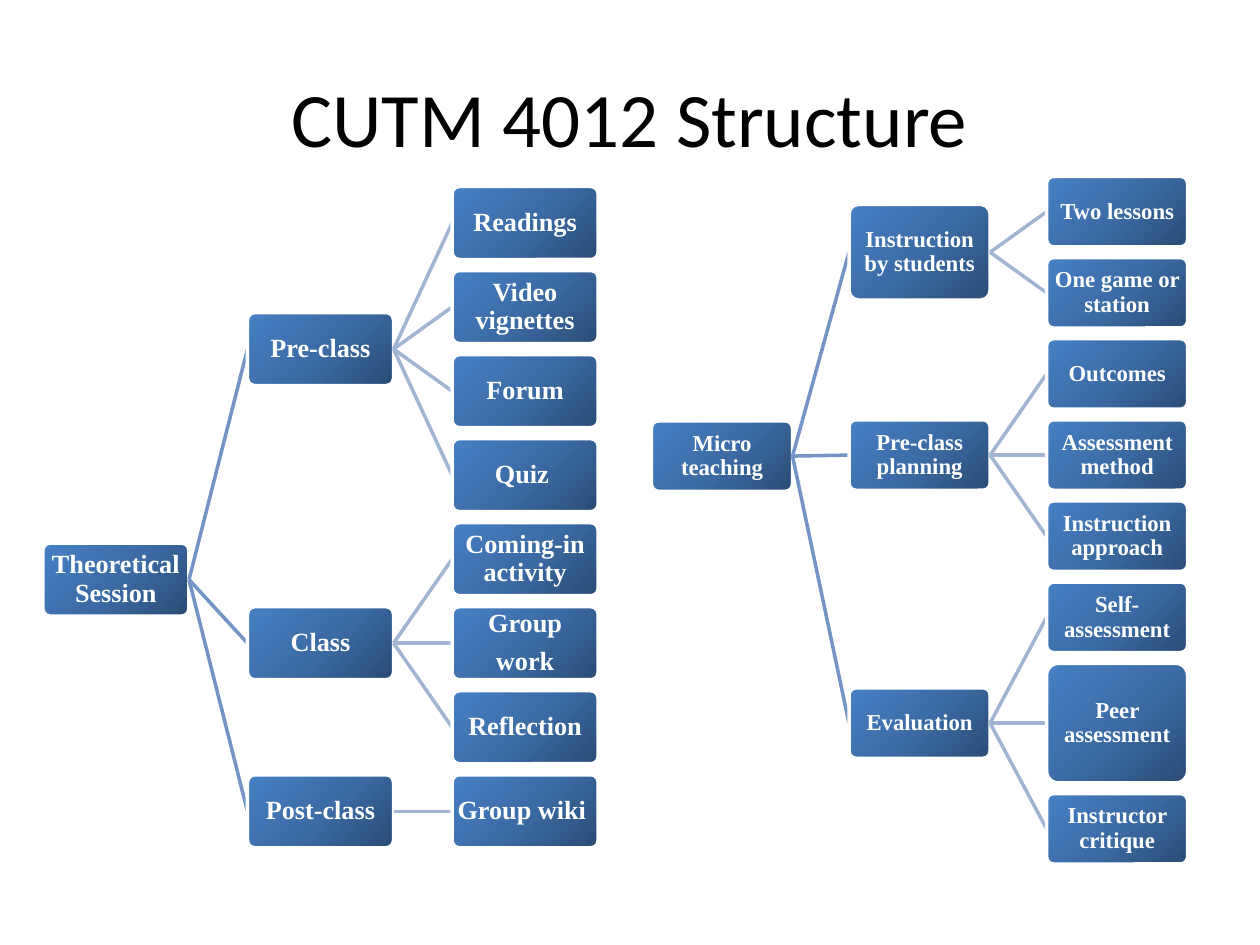
from dataclasses import dataclass

from pptx import Presentation
from pptx.dml.color import RGBColor
from pptx.enum.shapes import MSO_CONNECTOR as Line, MSO_SHAPE as Shape
from pptx.enum.text import MSO_ANCHOR as Anchor, PP_ALIGN as Align
from pptx.oxml import parse_xml
from pptx.oxml.ns import nsdecls, qn
from pptx.util import Inches, Pt


@dataclass(frozen=True)
class Theme:
    title_font: str = "Calibri"
    node_font: str = "Times New Roman"
    title_size: int = 44
    black: str = "000000"
    white: str = "FFFFFF"
    branch_link: str = "7394C5"
    leaf_link: str = "A1B4D4"
    gradient: tuple = ((0, "2A4C75"), (50, "3C6CA6"), (100, "4780C5"))
    line_width: int = 2


theme = Theme()
rgb = RGBColor.from_string

# Each tree: branches hold a label and their leaves
trees = [
    dict(
        root="Theoretical Session", left=0.34, top=1.48, width=1.16, height=0.58,
        size=15, root_middle=4.6, tall={},
        branches=[
            ("Pre-class", ["Readings", "Video vignettes", "Forum", "Quiz "]),
            ("Class", ["Coming-in activity", "Group\nwork", "Reflection"]),
            ("Post-class", ["Group wiki "]),
        ],
    ),
    dict(
        root="Micro teaching", left=5.17, top=1.4, width=1.12, height=0.56,
        size=13, root_middle=3.62,
        tall={"Instruction by students": 0.76, "Peer assessment": 0.95},
        branches=[
            ("Instruction by students", ["Two lessons", "One game or station"]),
            ("Pre-class planning",
             ["Outcomes", "Assessment method", "Instruction approach"]),
            ("Evaluation",
             ["Self-assessment", "Peer assessment", "Instructor critique"]),
        ],
    ),
]

deck = Presentation()
deck.slide_width, deck.slide_height = Inches(10), Inches(7.5)
page = deck.slides.add_slide(deck.slide_layouts[5])


def add_node(tree, label, column, middle):
    """Draw a gradient box centred vertically on middle."""
    height = tree["tall"].get(label, tree["height"])
    left = tree["left"] + column * 1.4 * tree["width"]
    box = page.shapes.add_shape(
        Shape.ROUNDED_RECTANGLE, Inches(left), Inches(middle - height / 2),
        Inches(tree["width"]), Inches(height))
    box.adjustments[0] = 0.1
    box.shadow.inherit = False
    box.line.color.rgb = rgb(theme.white)
    box.line.width = Pt(theme.line_width)

    # Radial gradient, darkest at the bottom right corner
    stops = "".join(
        f'<a:gs pos="{pos * 1000}"><a:srgbClr val="{color}"/></a:gs>'
        for pos, color in theme.gradient)
    gradient = parse_xml(
        f'<a:gradFill {nsdecls("a")} rotWithShape="1"><a:gsLst>{stops}</a:gsLst>'
        '<a:path path="circle"><a:fillToRect l="100000" t="100000"/></a:path>'
        '</a:gradFill>')
    box.fill.background()
    props = box._element.spPr
    props.replace(props.find(qn("a:noFill")), gradient)

    frame = box.text_frame
    frame.word_wrap = True
    frame.vertical_anchor = Anchor.MIDDLE
    frame.margin_left = frame.margin_right = Inches(0.01)
    frame.margin_top = frame.margin_bottom = Inches(0.01)
    frame.text = label
    for para in frame.paragraphs:
        para.alignment = Align.CENTER
        para.line_spacing = 0.9
        para.space_after = Pt(round(0.35 * tree["size"], 1))
        para.font.name = theme.node_font
        para.font.size = Pt(tree["size"])
        para.font.bold = True
        para.font.color.rgb = rgb(theme.white)


def add_link(tree, column, start, end, color):
    """Join a box in column to one in the next column."""
    left = tree["left"] + column * 1.4 * tree["width"] + tree["width"]
    link = page.shapes.add_connector(
        Line.STRAIGHT, Inches(left), Inches(start),
        Inches(left + 0.4 * tree["width"]), Inches(end))
    link.line.color.rgb = rgb(color)
    link.line.width = Pt(theme.line_width)
    link._element.spPr.append(parse_xml(f'<a:effectLst {nsdecls("a")}/>'))


# Title
title = page.shapes.title
title.left, title.top = Inches(0.5), Inches(0.3)
title.width, title.height = Inches(9), Inches(1.25)
title.text_frame.text = "CUTM 4012 Structure"
title.text_frame.vertical_anchor = Anchor.MIDDLE
para = title.text_frame.paragraphs[0]
para.alignment = Align.CENTER
para.font.name = theme.title_font
para.font.size = Pt(theme.title_size)
para.font.color.rgb = rgb(theme.black)

# Trees: leaves stack downwards, each branch is centred on its leaves
for tree in trees:
    add_node(tree, tree["root"], 0, tree["root_middle"])
    top = tree["top"]
    for branch, leaves in tree["branches"]:
        middles = []
        for leaf in leaves:
            height = tree["tall"].get(leaf, tree["height"])
            middles.append(top + height / 2)
            top += height + 0.15 * tree["height"]
        center = (middles[0] + middles[-1]) / 2
        add_link(tree, 0, tree["root_middle"], center, theme.branch_link)
        add_node(tree, branch, 1, center)
        for leaf, middle in zip(leaves, middles):
            add_link(tree, 1, center, middle, theme.leaf_link)
            add_node(tree, leaf, 2, middle)

deck.save("out.pptx")
